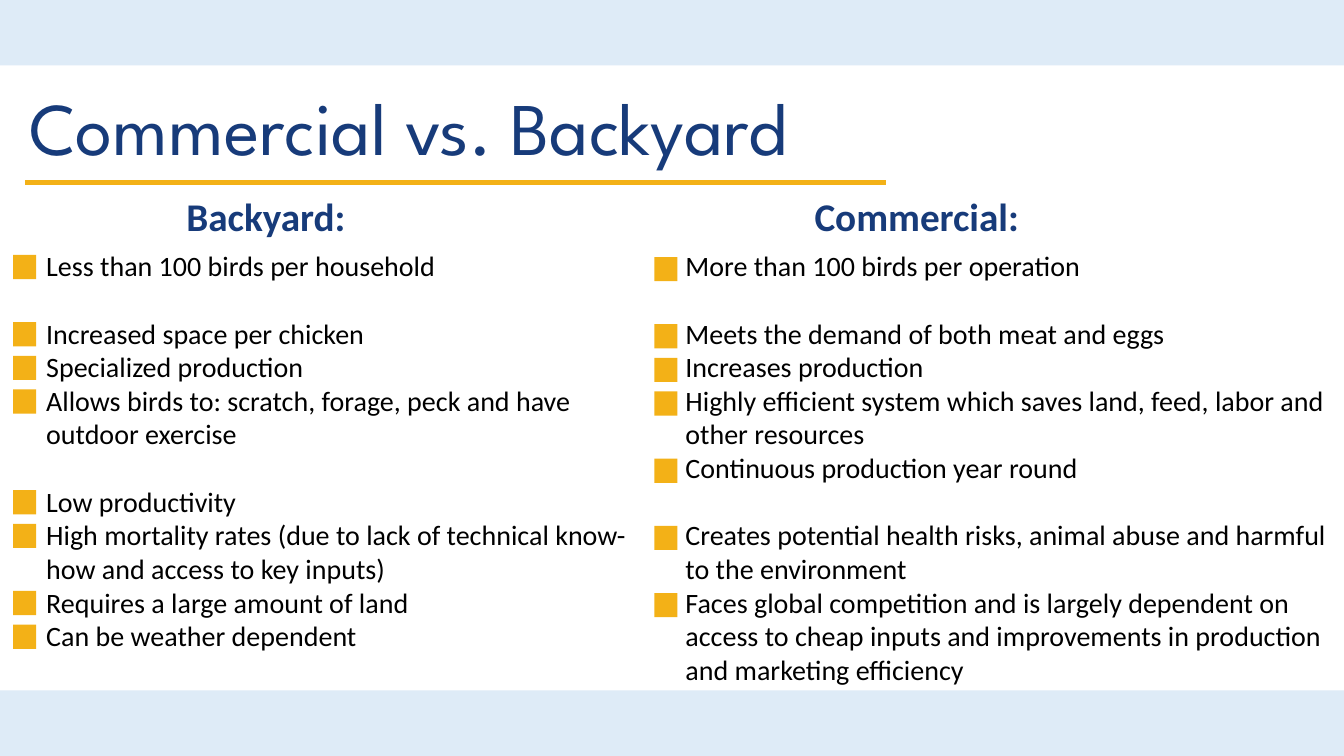
import pptx
import pptx.dml.color
import pptx.enum.shapes
import pptx.util
from lxml import etree
from pptx.oxml.ns import qn
from pptx.util import Inches, Pt

WIDTH, HEIGHT = 13.33, 7.5
BAND_HEIGHT = 0.65
LINE_POINTS = 24
LINE_HEIGHT = LINE_POINTS / 72
BODY_TOP = 2.42
NAVY, GOLD, PALE_BLUE, BLACK = "173B7A", "F3B117", "DEEBF7", "000000"

presentation = pptx.Presentation()
presentation.slide_width = Inches(WIDTH)
presentation.slide_height = Inches(HEIGHT)
slide = presentation.slides.add_slide(presentation.slide_layouts[6])


def add_rectangle(left, top, width, height, color):
    shape = slide.shapes.add_shape(
        pptx.enum.shapes.MSO_SHAPE.RECTANGLE,
        Inches(left), Inches(top), Inches(width), Inches(height))
    shape.shadow.inherit = False
    shape.fill.solid()
    shape.fill.fore_color.rgb = pptx.dml.color.RGBColor.from_string(color)
    shape.line.fill.background()


def add_text(left, top, width, height, lines, size, color, font="Calibri", bold=False):
    """Add a wrapping text box with one paragraph per line and return its paragraphs."""
    box = slide.shapes.add_textbox(Inches(left), Inches(top), Inches(width), Inches(height))
    frame = box.text_frame
    frame.word_wrap = True
    frame.text = "\n".join(lines)
    for paragraph in frame.paragraphs:
        paragraph.font.name = font
        paragraph.font.size = Pt(size)
        paragraph.font.bold = bold
        paragraph.font.color.rgb = pptx.dml.color.RGBColor.from_string(color)
    return frame.paragraphs


for band_top in (0, HEIGHT - BAND_HEIGHT):
    add_rectangle(0, band_top, WIDTH, BAND_HEIGHT, PALE_BLUE)

rule = slide.shapes.add_connector(
    pptx.enum.shapes.MSO_CONNECTOR.STRAIGHT,
    Inches(0.25), Inches(1.81), Inches(8.79), Inches(1.81))
rule.line.color.rgb = pptx.dml.color.RGBColor.from_string(GOLD)
rule.line.width = Pt(3)
etree.SubElement(rule._element.spPr, qn("a:effectLst"))

add_text(0.19, 0.76, 11.38, 0.99, ["Commercial vs. Backyard"], 53, NAVY, "League Spartan")

# Each item: text, lines it fills, blank lines above it
backyard = [
    ("Less than 100 birds per household", 1, 0),
    ("Increased space per chicken", 1, 1),
    ("Specialized production", 1, 0),
    ("Allows birds to: scratch, forage, peck and have outdoor exercise", 2, 0),
    ("Low productivity", 1, 1),
    ("High mortality rates (due to lack of technical know-how and access to key inputs)", 2, 0),
    ("Requires a large amount of land", 1, 0),
    ("Can be weather dependent", 1, 0),
]
commercial = [
    ("More than 100 birds per operation", 1, 0),
    ("Meets the demand of both meat and eggs", 1, 1),
    ("Increases production", 1, 0),
    ("Highly efficient system which saves land, feed, labor and other resources", 2, 0),
    ("Continuous production year round", 1, 0),
    ("Creates potential health risks, animal abuse and harmful to the environment", 2, 1),
    ("Faces global competition and is largely dependent on access to cheap inputs "
     "and improvements in production and marketing efficiency", 3, 0),
]

# Heading, its left and width, text left and width, first marker's left and top, items
columns = [
    ("Backyard:", 1.75, 1.81, 0.36, 5.97, 0.13, 2.53, backyard),
    ("Commercial:", 7.98, 2.42, 6.7, 6.83, 6.49, 2.55, commercial),
]
for (heading, heading_left, heading_width, text_left, text_width,
     marker_left, marker_top, items) in columns:
    add_text(heading_left, 1.86, heading_width, 0.57, [heading], 28, NAVY, bold=True)
    paragraphs = add_text(text_left, BODY_TOP, text_width, 4.4,
                          [text for text, _, _ in items], 20, BLACK)
    line = 0
    for paragraph, (_, line_count, blank_lines) in zip(paragraphs, items):
        paragraph.line_spacing = Pt(LINE_POINTS)
        paragraph.space_before = Pt(LINE_POINTS * blank_lines)
        line += blank_lines
        add_rectangle(marker_left, marker_top + line * LINE_HEIGHT, 0.23, 0.24, GOLD)
        line += line_count

presentation.save("out.pptx")
